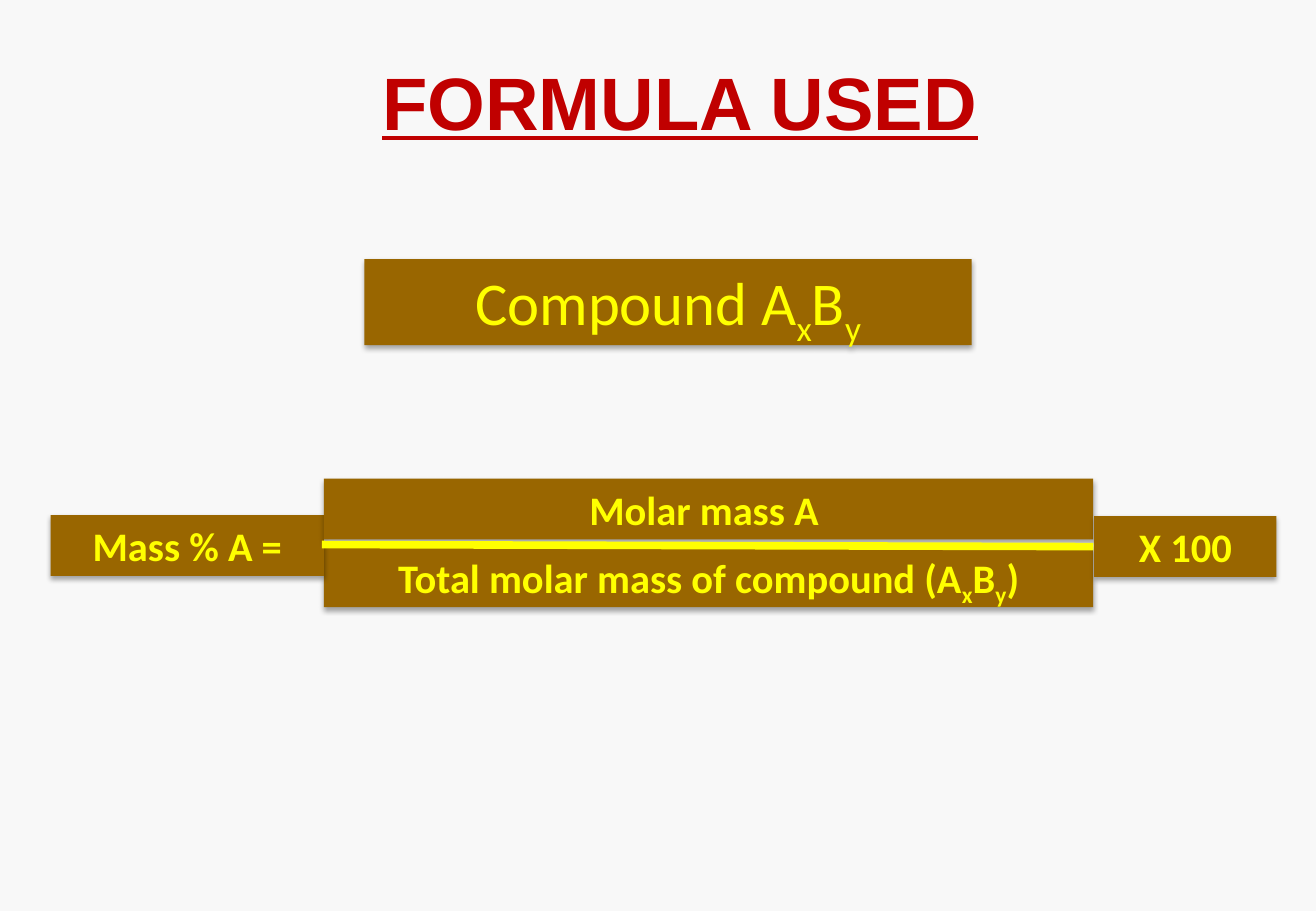
from typing import NamedTuple

from lxml import etree
from pptx import Presentation
from pptx.dml.color import RGBColor
from pptx.enum.shapes import MSO_CONNECTOR, MSO_SHAPE
from pptx.enum.text import MSO_ANCHOR, MSO_AUTO_SIZE, PP_ALIGN
from pptx.oxml.ns import qn
from pptx.slide import Slide
from pptx.text.text import TextFrame
from pptx.util import Emu, Pt

RECTANGLE = MSO_SHAPE.RECTANGLE
STRAIGHT = MSO_CONNECTOR.STRAIGHT
TOP = MSO_ANCHOR.TOP
MIDDLE = MSO_ANCHOR.MIDDLE
FIT_SHAPE = MSO_AUTO_SIZE.SHAPE_TO_FIT_TEXT
CENTER = PP_ALIGN.CENTER

EMU_PER_PX = 7620
COLORS = {
    "background": "F8F8F8",
    "title": "C00000",
    "box": "996600",
    "formula": "FFFF00",
    "shadow": "000000",
}


class Piece(NamedTuple):
    text: str
    subscript: bool = False
    underline: bool = False


class TextStyle(NamedTuple):
    font: str
    size: int
    color: str
    bold: bool


class Box(NamedTuple):
    left: int
    top: int
    width: int
    height: int


class FormulaBox(NamedTuple):
    box: Box
    pieces: tuple[Piece, ...]
    style: TextStyle


TITLE_STYLE = TextStyle("Arial", 44, "title", True)
COMPOUND_STYLE = TextStyle("Calibri", 36, "formula", False)
TERM_STYLE = TextStyle("Calibri", 24, "formula", True)

TITLE_BOX = Box(140, 30, 1084, 150)
TITLE_PIECES = (Piece("FORMULA USED", underline=True), Piece(" "))
SUBSCRIPTS = (Piece("x", subscript=True), Piece("B"), Piece("y", subscript=True))

FORMULA_BOXES = (
    FormulaBox(Box(360, 256, 600, 85), (Piece("Compound A"), *SUBSCRIPTS), COMPOUND_STYLE),
    FormulaBox(
        Box(320, 540, 760, 60),
        (Piece("Total molar mass of compound (A"), *SUBSCRIPTS, Piece(")")),
        TERM_STYLE,
    ),
    FormulaBox(Box(50, 509, 270, 60), (Piece("Mass % A ="),), TERM_STYLE),
    FormulaBox(Box(320, 473, 760, 60), (Piece("Molar mass A "),), TERM_STYLE),
    FormulaBox(Box(1081, 510, 180, 60), (Piece("X 100"),), TERM_STYLE),
)


def px(length: int) -> Emu:
    return Emu(length * EMU_PER_PX)


def color(name: str) -> RGBColor:
    return RGBColor.from_string(COLORS[name])


def write_text(frame: TextFrame, pieces: tuple[Piece, ...], style: TextStyle) -> None:
    frame.word_wrap = True
    paragraph = frame.paragraphs[0]
    paragraph.alignment = CENTER
    for piece in pieces:
        run = paragraph.add_run()
        run.text = piece.text
        run.font.name = style.font
        run.font.size = Pt(style.size)
        run.font.bold = style.bold
        run.font.underline = piece.underline
        run.font.color.rgb = color(style.color)
        if piece.subscript:
            run._r.get_or_add_rPr().set("baseline", "-25000")


def add_title(slide: Slide) -> None:
    title = slide.shapes.add_textbox(*map(px, TITLE_BOX))
    frame = title.text_frame
    frame.vertical_anchor = MIDDLE
    write_text(frame, TITLE_PIECES, TITLE_STYLE)
    frame.paragraphs[0].line_spacing = 0.9


def add_formula_box(slide: Slide, item: FormulaBox) -> None:
    shape = slide.shapes.add_shape(RECTANGLE, *map(px, item.box))
    shape.fill.solid()
    shape.fill.fore_color.rgb = color("box")
    shape.line.fill.background()
    shape.shadow.inherit = False
    effects = shape._element.spPr.find(qn("a:effectLst"))
    shadow = etree.SubElement(
        effects,
        qn("a:outerShdw"),
        blurRad=str(Pt(3.1)),
        dist=str(Pt(1.8)),
        dir="5400000",
        rotWithShape="0",
    )
    shadow_color = etree.SubElement(shadow, qn("a:srgbClr"), val=COLORS["shadow"])
    etree.SubElement(shadow_color, qn("a:alpha"), val="35000")
    frame = shape.text_frame
    frame.vertical_anchor = TOP
    frame.auto_size = FIT_SHAPE
    write_text(frame, item.pieces, item.style)


def add_fraction_bar(slide: Slide) -> None:
    bar = slide.shapes.add_connector(STRAIGHT, px(318), px(538), px(1080), px(540))
    bar.line.color.rgb = color("formula")
    bar.line.width = Pt(4.5)
    etree.SubElement(bar._element.spPr, qn("a:effectLst"))


def main() -> None:
    presentation = Presentation()
    presentation.slide_width = px(1300)
    presentation.slide_height = px(900)
    slide = presentation.slides.add_slide(presentation.slide_layouts[6])
    slide.background.fill.solid()
    slide.background.fill.fore_color.rgb = color("background")
    add_title(slide)
    for item in FORMULA_BOXES:
        add_formula_box(slide, item)
    add_fraction_bar(slide)
    presentation.save("out.pptx")


if __name__ == "__main__":
    main()
